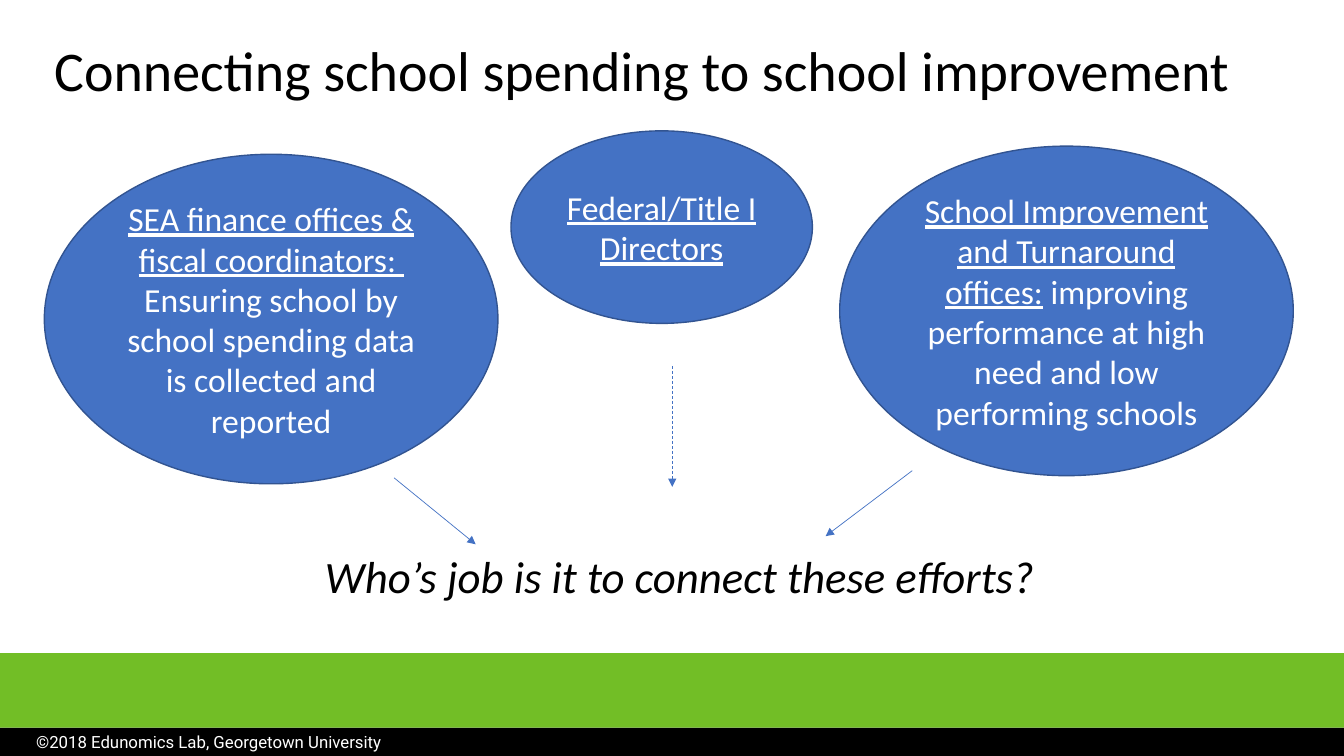
from dataclasses import dataclass
from typing import NamedTuple

import pptx
import pptx.util
from pptx.dml.color import RGBColor
from pptx.enum.dml import MSO_LINE_DASH_STYLE
from pptx.enum.shapes import MSO_CONNECTOR, MSO_SHAPE
from pptx.enum.text import MSO_ANCHOR, MSO_AUTO_SIZE, PP_ALIGN
from pptx.oxml.ns import qn
from pptx.shapes.base import BaseShape
from pptx.slide import Slide
from pptx.text.text import TextFrame
from lxml import etree

Pt = pptx.util.Pt


@dataclass(frozen=True)
class Theme:
    black: str = "000000"
    white: str = "FFFFFF"
    blue: str = "4472C4"
    outline: str = "325491"
    green: str = "72BE26"
    font: str = "Calibri"
    footer_font: str = "Roboto"
    title_size: float = 40
    question_size: float = 32
    body_size: float = 24
    footer_size: float = 12


THEME = Theme()


class Box(NamedTuple):
    left: float
    top: float
    width: float
    height: float


class Words(NamedTuple):
    text: str
    underline: bool = False
    italic: bool = False


@dataclass(frozen=True)
class Style:
    size: float
    color: str
    font: str = THEME.font
    alignment: PP_ALIGN = PP_ALIGN.CENTER
    anchor: MSO_ANCHOR = MSO_ANCHOR.MIDDLE
    line_spacing: float = 1.0
    grows: bool = False


@dataclass(frozen=True)
class Role:
    box: Box
    paragraphs: list[list[Words]]


@dataclass(frozen=True)
class Label:
    box: Box
    words: Words
    style: Style


@dataclass(frozen=True)
class Arrow:
    start: tuple[float, float]
    end: tuple[float, float]
    dashed: bool = False


class Band(NamedTuple):
    box: Box
    color: str


ROLE_STYLE = Style(THEME.body_size, THEME.white)

ROLES = [
    Role(Box(31.7, 110.2, 324, 235.4), [
        [Words("SEA finance offices & fiscal coordinators: ", underline=True)],
        [Words("Ensuring school by school spending data is collected and reported")],
    ]),
    Role(Box(599.8, 104.4, 324, 235.4), [[
        Words("School Improvement and Turnaround offices:", underline=True),
        Words(" improving performance at high need and low performing schools"),
    ]]),
    Role(Box(365, 93.5, 215.3, 137.5), [[Words("Federal/Title I Directors", underline=True)]]),
]

LABELS = [
    Label(Box(31.7, 0, 861.8, 104.4),
          Words("Connecting school spending to school improvement"),
          Style(THEME.title_size, THEME.black, alignment=PP_ALIGN.LEFT, line_spacing=0.9)),
    Label(Box(221.8, 388.1, 527.8, 46.1),
          Words("Who’s job is it to connect these efforts?", italic=True),
          Style(THEME.question_size, THEME.black, anchor=MSO_ANCHOR.TOP, grows=True)),
    Label(Box(18.7, 519.1, 445, 21.8),
          Words("©2018 Edunomics Lab, Georgetown University"),
          Style(THEME.footer_size, THEME.white, THEME.footer_font, PP_ALIGN.LEFT,
                MSO_ANCHOR.TOP, grows=True)),
]

ARROWS = [
    Arrow((281.5, 341.3), (339.8, 388.8)),
    Arrow((651.6, 336.2), (589.7, 383)),
    Arrow((480.2, 261.4), (480.2, 347.8), dashed=True),
]

BANDS = [
    Band(Box(0, 519.8, 960, 20.2), THEME.black),
    Band(Box(0, 466.5, 960, 53.3), THEME.green),
]


def write_text(frame: TextFrame, paragraphs: list[list[Words]], style: Style) -> None:
    frame.word_wrap = True
    frame.vertical_anchor = style.anchor
    frame.auto_size = MSO_AUTO_SIZE.SHAPE_TO_FIT_TEXT if style.grows else MSO_AUTO_SIZE.NONE
    for index, line in enumerate(paragraphs):
        paragraph = frame.add_paragraph() if index else frame.paragraphs[0]
        paragraph.alignment = style.alignment
        paragraph.line_spacing = style.line_spacing
        for words in line:
            run = paragraph.add_run()
            run.text = words.text
            run.font.name = style.font
            run.font.size = Pt(style.size)
            run.font.color.rgb = RGBColor.from_string(style.color)
            run.font.underline = words.underline
            run.font.italic = words.italic


def add_filled(slide: Slide, kind: MSO_SHAPE, box: Box, color: str) -> BaseShape:
    shape = slide.shapes.add_shape(kind, *map(Pt, box))
    shape.shadow.inherit = False
    shape.fill.solid()
    shape.fill.fore_color.rgb = RGBColor.from_string(color)
    shape.line.fill.background()
    return shape


def add_role(slide: Slide, role: Role) -> None:
    shape = add_filled(slide, MSO_SHAPE.OVAL, role.box, THEME.blue)
    shape.line.color.rgb = RGBColor.from_string(THEME.outline)
    shape.line.width = Pt(1)
    write_text(shape.text_frame, role.paragraphs, ROLE_STYLE)


def add_label(slide: Slide, label: Label) -> None:
    shape = slide.shapes.add_textbox(*map(Pt, label.box))
    write_text(shape.text_frame, [[label.words]], label.style)


def add_arrow(slide: Slide, arrow: Arrow) -> None:
    connector = slide.shapes.add_connector(
        MSO_CONNECTOR.STRAIGHT, *map(Pt, arrow.start + arrow.end))
    connector.line.color.rgb = RGBColor.from_string(THEME.blue)
    connector.line.width = Pt(0.5)
    if arrow.dashed:
        connector.line.dash_style = MSO_LINE_DASH_STYLE.DASH
    etree.SubElement(connector.line._get_or_add_ln(), qn("a:tailEnd"), type="triangle")
    etree.SubElement(connector._element.spPr, qn("a:effectLst"))


def main() -> None:
    """Build the slide on connecting school spending to improvement."""
    presentation = pptx.Presentation()
    presentation.slide_width = Pt(960)
    presentation.slide_height = Pt(540)
    slide = presentation.slides.add_slide(presentation.slide_layouts[6])
    for band in BANDS:
        add_filled(slide, MSO_SHAPE.RECTANGLE, band.box, band.color)
    for role in ROLES:
        add_role(slide, role)
    for label in LABELS:
        add_label(slide, label)
    for arrow in ARROWS:
        add_arrow(slide, arrow)
    presentation.save("out.pptx")


if __name__ == "__main__":
    main()
